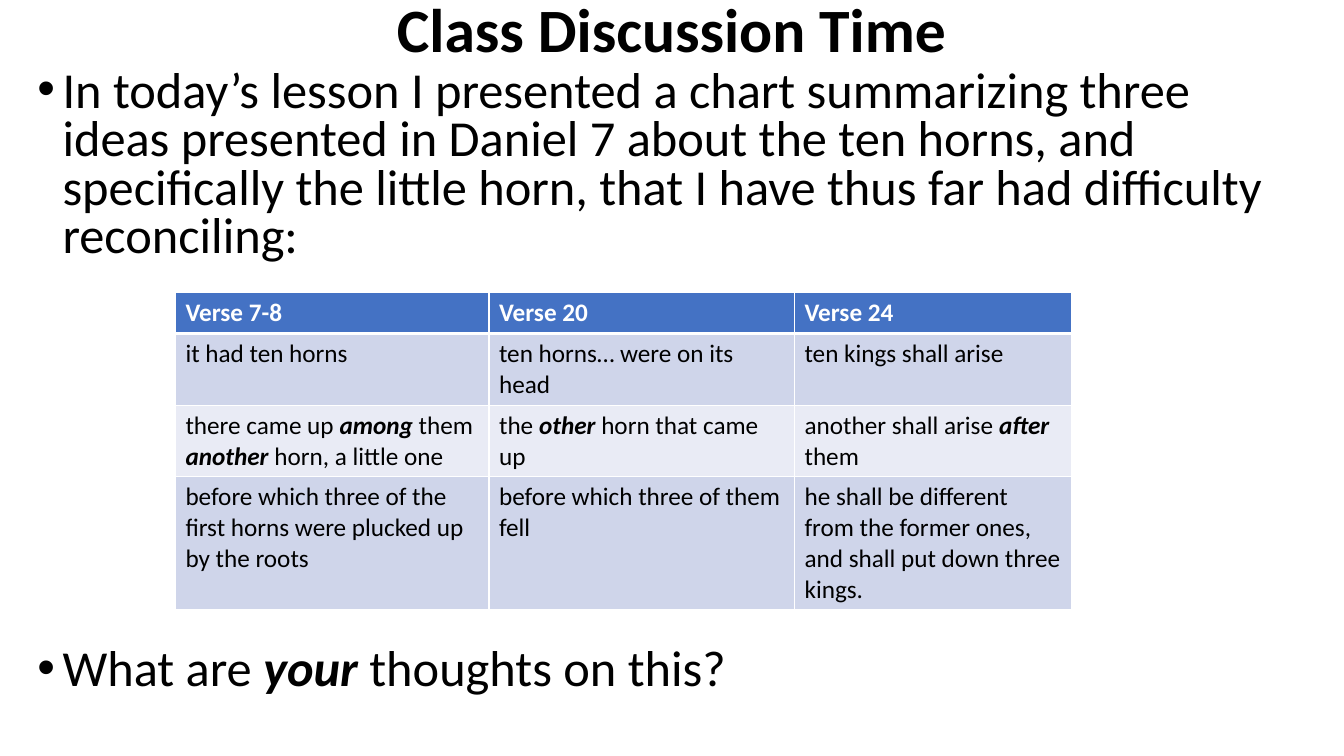
"""Build the class discussion slide with a verse comparison table."""
from lxml import etree
from pptx import Presentation
from pptx.dml.color import RGBColor
from pptx.enum.text import MSO_ANCHOR, MSO_AUTO_SIZE, PP_ALIGN
from pptx.oxml.ns import qn
from pptx.util import Inches, Pt

CENTER, LEFT = PP_ALIGN.CENTER, PP_ALIGN.LEFT
MIDDLE, TOP = MSO_ANCHOR.MIDDLE, MSO_ANCHOR.TOP
NO_FIT = MSO_AUTO_SIZE.NONE
FONT = "Calibri"
COLORS = {"text": "000000", "light": "FFFFFF", "header": "4472C4",
          "odd": "CFD5EA", "even": "E9EBF5"}
COLUMN_WIDTHS = (3.11, 3.03, 2.75)
ROW_HEIGHTS = (0.41, 0.7, 0.7, 1.3)
VERSES = (
    ("Verse 7-8", "Verse 20", "Verse 24"),
    ("it had ten horns", "ten horns… were on its head", "ten kings shall arise"),
    ("there came up *among* them *another* horn, a little one",
     "the *other* horn that came up", "another shall arise *after* them"),
    ("before which three of the first horns were plucked up by the roots",
     "before which three of them fell",
     "he shall be different from the former ones, and shall put down three kings."),
)
INTRODUCTION = ("In today’s lesson I presented a chart summarizing three ideas "
                "presented in Daniel 7 about the ten horns, and specifically the "
                "little horn, that I have thus far had difficulty reconciling:")
QUESTION = "What are *your* thoughts on this?"


def set_values(target, values):
    for name, value in values.items():
        setattr(target, name, value)


def write_text(paragraph, text, size, color="text", bold=False):
    for index, part in enumerate(text.split("*")):
        emphasized = index % 2 == 1
        run = paragraph.add_run()
        run.text = part
        set_values(run.font, {"name": FONT, "size": Pt(size),
                              "bold": bold or emphasized, "italic": emphasized})
        run.font.color.rgb = RGBColor.from_string(COLORS[color])


def fill_placeholder(shape, box, text, size, spacing, alignment=LEFT,
                     anchor=TOP, bold=False):
    left, top, width, height = map(Inches, box)
    set_values(shape, {"left": left, "top": top, "width": width, "height": height})
    set_values(shape.text_frame, {"word_wrap": True, "auto_size": NO_FIT,
                                  "vertical_anchor": anchor})
    paragraph = shape.text_frame.paragraphs[0]
    set_values(paragraph, {"alignment": alignment, "line_spacing": spacing,
                           "space_before": Pt(0)})
    write_text(paragraph, text, size, bold=bold)
    return paragraph


def add_list_item(shape, box, text, spacing):
    paragraph = fill_placeholder(shape, box, text, 36, spacing)
    properties = paragraph._p.get_or_add_pPr()
    properties.set("marL", str(Inches(0.25)))
    properties.set("indent", str(-Inches(0.25)))
    bullet_font = etree.SubElement(properties, qn("a:buFont"))
    bullet_font.set("typeface", "Arial")
    etree.SubElement(properties, qn("a:buChar")).set("char", "•")


def add_borders(cell, bottom_width):
    properties = cell._tc.get_or_add_tcPr()
    widths = {"lnL": 1, "lnR": 1, "lnT": 1, "lnB": bottom_width}
    for side, width in widths.items():
        line = etree.SubElement(properties, qn(f"a:{side}"), w=str(Pt(width)))
        fill = etree.SubElement(line, qn("a:solidFill"))
        etree.SubElement(fill, qn("a:srgbClr"), val=COLORS["light"])


def add_verse_table(slide):
    frame = slide.shapes.add_table(
        len(VERSES), len(COLUMN_WIDTHS), Inches(1.74), Inches(2.9),
        Inches(sum(COLUMN_WIDTHS)), Inches(sum(ROW_HEIGHTS)))
    table = frame.table
    for column, width in zip(table.columns, COLUMN_WIDTHS):
        column.width = Inches(width)
    for index, (row, height, texts) in enumerate(zip(table.rows, ROW_HEIGHTS, VERSES)):
        row.height = Inches(height)
        header = index == 0
        band = "header" if header else ("even", "odd")[index % 2]
        for cell, text in zip(row.cells, texts):
            add_borders(cell, 3 if header else 1)
            cell.fill.solid()
            cell.fill.fore_color.rgb = RGBColor.from_string(COLORS[band])
            write_text(cell.text_frame.paragraphs[0], text, 18,
                       "light" if header else "text", header)


def main():
    presentation = Presentation()
    set_values(presentation, {"slide_width": Inches(13.33),
                              "slide_height": Inches(7.5)})
    slide = presentation.slides.add_slide(
        presentation.slide_layouts.get_by_name("Two Content"))
    title, introduction, question = list(slide.placeholders)[:3]
    fill_placeholder(title, (0, 0, 13.33, 0.64), "Class Discussion Time", 44, 0.9,
                     CENTER, MIDDLE, True)
    add_list_item(introduction, (0.27, 0.64, 12.63, 2.25), INTRODUCTION, 0.8)
    add_verse_table(slide)
    add_list_item(question, (0.27, 6.33, 12.63, 0.87), QUESTION, 0.9)
    presentation.save("out.pptx")


if __name__ == "__main__":
    main()
